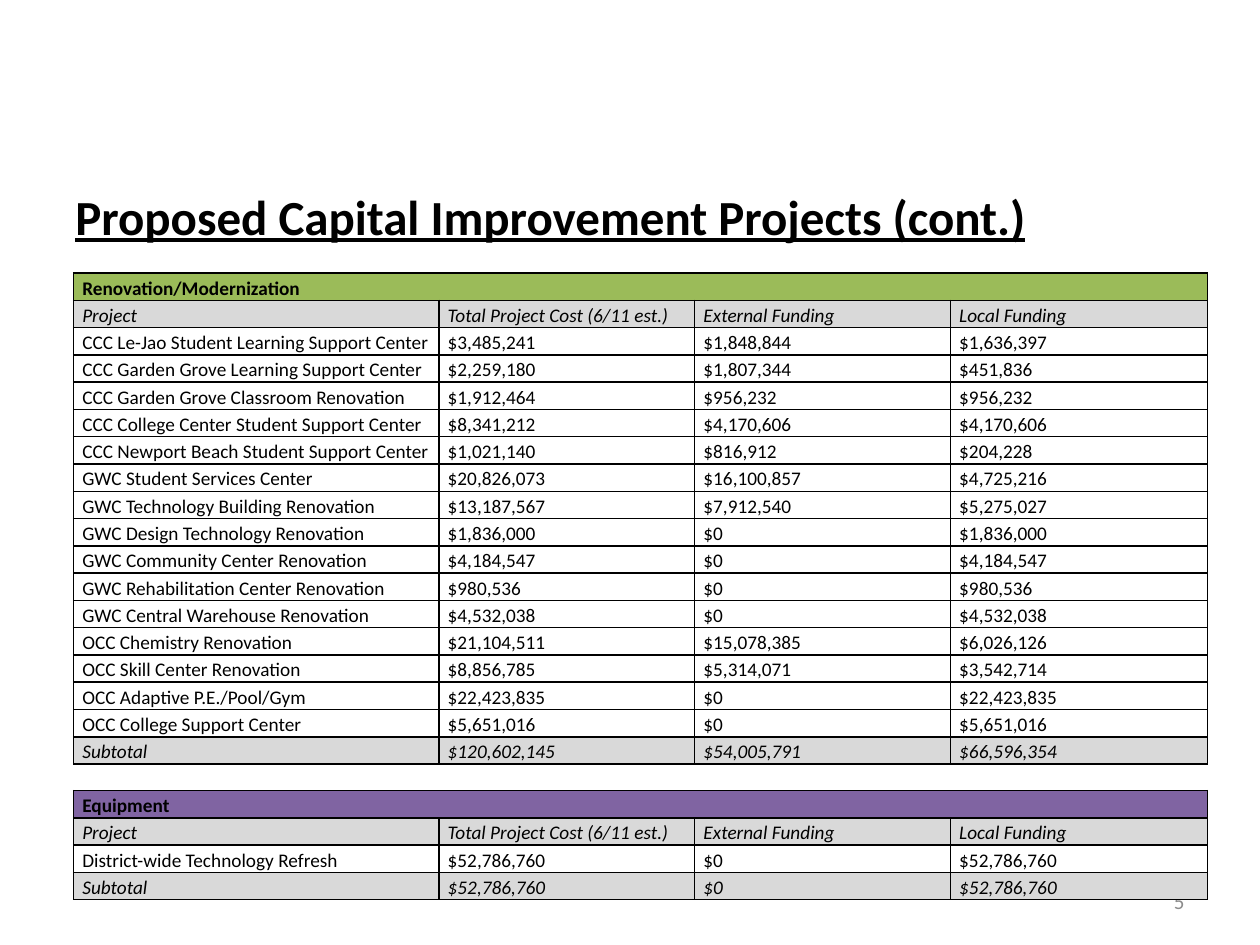
import pptx
import pptx.dml.color
import pptx.enum.text
import pptx.util
from lxml import etree
from pptx.oxml.ns import qn

Inches = pptx.util.Inches
Anchor = pptx.enum.text.MSO_ANCHOR
Align = pptx.enum.text.PP_ALIGN

BLACK, WHITE, GREY = "000000", "FFFFFF", "D9D9D9"
COLUMN_WIDTHS = (2.9, 2.03, 2.03, 2.04)
TABLE_HEIGHT = 4.98
GAP_HEIGHT = 0.21
HEADINGS = ("Project", "Total Project Cost (6/11 est.)", "External Funding", "Local Funding")

RENOVATION = (
    ("CCC Le-Jao Student Learning Support Center", "$3,485,241", "$1,848,844", "$1,636,397"),
    ("CCC Garden Grove Learning Support Center", "$2,259,180", "$1,807,344", "$451,836"),
    ("CCC Garden Grove Classroom Renovation", "$1,912,464", "$956,232", "$956,232"),
    ("CCC College Center Student Support Center", "$8,341,212", "$4,170,606", "$4,170,606"),
    ("CCC Newport Beach Student Support Center", "$1,021,140", "$816,912", "$204,228"),
    ("GWC Student Services Center", "$20,826,073", "$16,100,857", "$4,725,216"),
    ("GWC Technology Building Renovation", "$13,187,567", "$7,912,540", "$5,275,027"),
    ("GWC Design Technology Renovation", "$1,836,000", "$0", "$1,836,000"),
    ("GWC Community Center Renovation", "$4,184,547", "$0", "$4,184,547"),
    ("GWC Rehabilitation Center Renovation", "$980,536", "$0", "$980,536"),
    ("GWC Central Warehouse Renovation", "$4,532,038", "$0", "$4,532,038"),
    ("OCC Chemistry Renovation", "$21,104,511", "$15,078,385", "$6,026,126"),
    ("OCC Skill Center Renovation", "$8,856,785", "$5,314,071", "$3,542,714"),
    ("OCC Adaptive P.E./Pool/Gym", "$22,423,835", "$0", "$22,423,835"),
    ("OCC College Support Center", "$5,651,016", "$0", "$5,651,016"),
)
RENOVATION_SUBTOTAL = ("Subtotal", "$120,602,145", "$54,005,791", "$66,596,354")
EQUIPMENT = (("District-wide Technology Refresh", "$52,786,760", "$0", "$52,786,760"),)
EQUIPMENT_SUBTOTAL = ("Subtotal", "$52,786,760", "$0", "$52,786,760")


def rgb(color):
    return pptx.dml.color.RGBColor.from_string(color)


def write(frame, text, size=11, color=BLACK, bold=False, italic=False,
          underline=False, align=Align.LEFT, spacing=1.0):
    paragraph = frame.paragraphs[0]
    paragraph.alignment = align
    paragraph.line_spacing = spacing
    run = paragraph.add_run()
    run.text = text
    font = run.font
    font.name, font.size = "Calibri", pptx.util.Pt(size)
    font.bold, font.italic, font.underline = bold, italic, underline
    font.color.rgb = rgb(color)


def add_line_of_text(slide, box, text, **text_format):
    frame = slide.shapes.add_textbox(*map(Inches, box)).text_frame
    frame.word_wrap = True
    frame.vertical_anchor = Anchor.MIDDLE
    write(frame, text, **text_format)


def set_borders(cell, ruled_sides):
    """Rule the named sides (of L, R, T, B) in black; leave the others bare."""
    properties = cell._tc.get_or_add_tcPr()
    for side in "LRTB":
        line = etree.SubElement(properties, qn(f"a:ln{side}"), w=str(pptx.util.Pt(1)))
        if side in ruled_sides:
            fill = etree.SubElement(line, qn("a:solidFill"))
            etree.SubElement(fill, qn("a:srgbClr"), val=BLACK)
        else:
            etree.SubElement(line, qn("a:noFill"))


def style_cell(cell, fill, ruled_sides="LRTB"):
    cell.margin_left = cell.margin_right = Inches(0.07)
    cell.margin_top = cell.margin_bottom = 0
    set_borders(cell, ruled_sides)
    cell.fill.solid()
    cell.fill.fore_color.rgb = rgb(fill)


def fill_row(row, texts, fill=WHITE, **text_format):
    for cell, text in zip(row.cells, texts):
        style_cell(cell, fill)
        write(cell.text_frame, text, spacing=1.15, **text_format)


def merge_row(row, fill, ruled_sides="LRTB"):
    cells = list(row.cells)
    cells[0].merge(cells[-1])
    for cell in cells:
        style_cell(cell, fill, ruled_sides)
    return cells


def fill_gap(row):
    row.height = Inches(GAP_HEIGHT)
    for cell in merge_row(row, WHITE, ruled_sides="TB"):
        # An empty paragraph takes its height from its end mark.
        etree.SubElement(cell.text_frame.paragraphs[0]._p, qn("a:endParaRPr"), sz="1100")


def fill_section(rows, name, color, projects, subtotal):
    band = merge_row(next(rows), color)
    write(band[0].text_frame, name, bold=True, spacing=1.15)
    fill_row(next(rows), HEADINGS, GREY, italic=True)
    for project in projects:
        fill_row(next(rows), project)
    fill_row(next(rows), subtotal, GREY, italic=True)


def add_projects_table(slide, left, top):
    # Each section adds a band, headings and a subtotal; one gap row parts them.
    filled_rows = len(RENOVATION) + len(EQUIPMENT) + 2 * 3
    table = slide.shapes.add_table(
        filled_rows + 1, len(COLUMN_WIDTHS), Inches(left), Inches(top),
        Inches(sum(COLUMN_WIDTHS)), Inches(TABLE_HEIGHT)).table
    table.first_row = table.horz_banding = False
    for column, width in zip(table.columns, COLUMN_WIDTHS):
        column.width = Inches(width)
    for row in table.rows:
        row.height = Inches((TABLE_HEIGHT - GAP_HEIGHT) / filled_rows)

    rows = iter(table.rows)
    fill_section(rows, "Renovation/Modernization", "9BBB59", RENOVATION, RENOVATION_SUBTOTAL)
    fill_gap(next(rows))
    fill_section(rows, "Equipment", "8064A2", EQUIPMENT, EQUIPMENT_SUBTOTAL)


def main():
    deck = pptx.Presentation()
    deck.slide_width, deck.slide_height = Inches(10), Inches(7.5)
    slide = deck.slides.add_slide(deck.slide_layouts[6])
    add_line_of_text(slide, (7.17, 6.95, 2.33, 0.4), "5",
                     size=12, color="8C8C8C", align=Align.RIGHT)
    add_line_of_text(slide, (0.5, 1.17, 9, 1.08),
                     "Proposed Capital Improvement Projects (cont.)",
                     size=28, bold=True, underline=True)
    add_projects_table(slide, 7 / 12, 2 + 1 / 6)
    deck.save("out.pptx")


if __name__ == "__main__":
    main()
